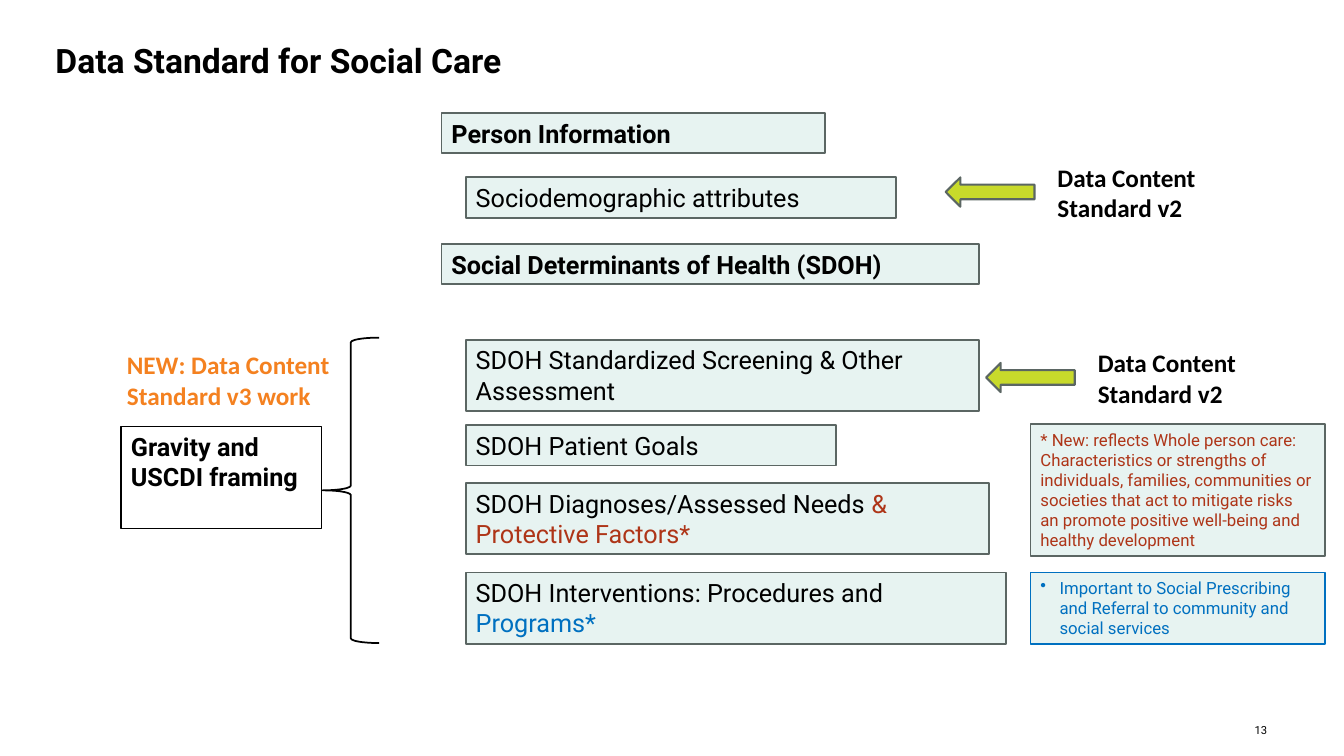
import dataclasses
import pptx
import pptx.dml.color
import pptx.enum.shapes
import pptx.enum.text
import pptx.oxml
import pptx.oxml.ns
import pptx.util

Inches = pptx.util.Inches
Shape = pptx.enum.shapes.MSO_SHAPE
Align = pptx.enum.text.PP_ALIGN
Anchor = pptx.enum.text.MSO_ANCHOR


def color(code):
    return pptx.dml.color.RGBColor.from_string(code)


@dataclasses.dataclass(frozen=True)
class Theme:
    font: str = "Roboto"
    note_font: str = "Calibri"
    black: str = "000000"
    mint: str = "E7F3F1"
    gray: str = "5B6663"
    lime: str = "C8DA2B"
    red: str = "AE3518"
    blue: str = "0070C0"
    orange: str = "F48120"
    title: int = 24
    body: int = 18
    note: int = 12
    page: int = 8


THEME = Theme()


def write(frame, *parts, size=THEME.body, ink=THEME.black, font=THEME.font,
          bold=False, align=Align.LEFT, anchor=Anchor.TOP, bullet=False, inset=None):
    frame.word_wrap = True
    frame.auto_size = pptx.enum.text.MSO_AUTO_SIZE.NONE
    frame.vertical_anchor = anchor
    if inset is not None:
        frame.margin_left = frame.margin_right = Inches(inset)
        frame.margin_top = frame.margin_bottom = Inches(inset)
    line = frame.paragraphs[0]
    line.alignment = align
    if bullet:
        props = line._p.get_or_add_pPr()
        props.set("marL", str(Inches(0.19)))
        props.set("indent", str(-Inches(0.19)))
        mark = pptx.oxml.parse_xml(
            f'<a:buChar {pptx.oxml.ns.nsdecls("a")} char="•"/>')
        props.append(mark)
    for part in parts:
        text, tint = part if isinstance(part, tuple) else (part, ink)
        run = line.add_run()
        run.text = text
        run.font.name = font
        run.font.size = pptx.util.Pt(size)
        run.font.bold = bold
        run.font.color.rgb = color(tint)


class Board:
    def __init__(self, theme):
        self.theme = theme
        self.deck = pptx.Presentation()
        self.deck.slide_width = Inches(13.33)
        self.deck.slide_height = Inches(7.5)
        self.slide = self.deck.slides.add_slide(self.deck.slide_layouts[5])

    def title(self, text, left, top, width, height):
        head = self.slide.shapes.title
        head.left, head.top = Inches(left), Inches(top)
        head.width, head.height = Inches(width), Inches(height)
        write(head.text_frame, text, size=self.theme.title, bold=True)

    def shape(self, kind, left, top, width, height, fill=None, line=None, weight=1.25):
        item = self.slide.shapes.add_shape(
            kind, Inches(left), Inches(top), Inches(width), Inches(height))
        item.shadow.inherit = False
        if fill:
            item.fill.solid()
            item.fill.fore_color.rgb = color(fill)
        else:
            item.fill.background()
        item.line.color.rgb = color(line or self.theme.gray)
        item.line.width = pptx.util.Pt(weight)
        return item

    def box(self, left, top, width, height, *parts, fill=THEME.mint, line=None,
            weight=1.25, **style):
        item = self.shape(Shape.RECTANGLE, left, top, width, height, fill, line, weight)
        write(item.text_frame, *parts, **style)

    def label(self, left, top, width, height, text, **style):
        item = self.slide.shapes.add_textbox(
            Inches(left), Inches(top), Inches(width), Inches(height))
        write(item.text_frame, text, **style)

    def source(self, left, top):
        self.shape(Shape.LEFT_ARROW, left, top, 0.88, 0.29,
                   self.theme.lime, weight=1.5)
        self.label(left + 1.01, top - 0.2, 1.7, 0.71, "Data Content Standard v2",
                   font=self.theme.note_font, bold=True)


def main():
    look = THEME
    board = Board(look)
    board.title("Data Standard for Social Care", 0.45, 0.35, 11.7, 0.5)

    heads = [
        (1.12, 3.8, "Person Information"),
        (2.42, 5.33, "Social Determinants of Health (SDOH)"),
    ]
    for top, width, text in heads:
        board.box(4.38, top, width, 0.4, text, bold=True)

    items = [
        (1.76, 4.27, 0.4, ["Sociodemographic attributes"]),
        (3.37, 5.09, 0.71, ["SDOH Standardized Screening & Other Assessment"]),
        (4.22, 3.67, 0.4, ["SDOH Patient Goals"]),
        (4.79, 5.19, 0.71,
         ["SDOH Diagnoses/Assessed Needs ", ("& Protective Factors*", look.red)]),
        (5.68, 5.36, 0.71,
         ["SDOH Interventions: Procedures and ", ("Programs*", look.blue)]),
    ]
    for top, width, height, parts in items:
        board.box(4.62, top, width, height, *parts)

    board.shape(Shape.LEFT_BRACE, 3.2, 3.35, 0.56, 3.03, line=look.black)
    board.box(1.2, 4.23, 1.99, 1.01, "Gravity and USCDI framing",
              fill=None, line=look.black, weight=0.75, bold=True)
    board.label(1.16, 3.42, 2.31, 0.71, "NEW: Data Content Standard v3 work",
                font=look.note_font, ink=look.orange, bold=True)

    for left, top in [(9.38, 1.76), (9.78, 3.6)]:
        board.source(left, top)

    board.box(10.22, 4.21, 2.92, 1.31,
              "* New: reflects Whole person care: Characteristics or strengths of "
              "individuals, families, communities or societies that act to mitigate "
              "risks an promote positive well-being and healthy development",
              size=look.note, ink=look.red)
    board.box(10.22, 5.68, 2.92, 0.71,
              "Important to Social Prescribing and Referral to community and "
              "social services",
              line=look.blue, size=look.note, ink=look.blue, bullet=True)
    board.label(11.94, 7.18, 0.63, 0.13, "13", size=look.page,
                align=Align.RIGHT, anchor=Anchor.MIDDLE, inset=0)

    board.deck.save("out.pptx")


if __name__ == "__main__":
    main()
